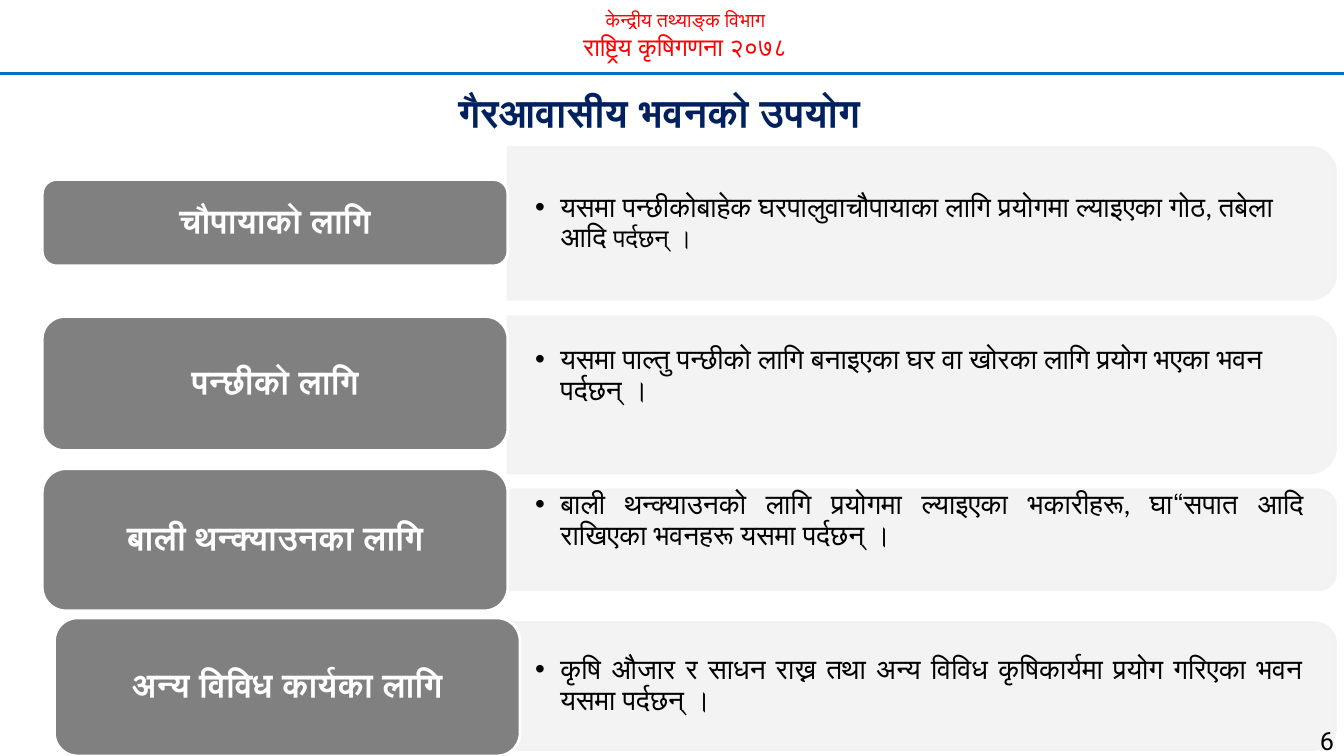
from dataclasses import dataclass

from lxml import etree
from pptx import Presentation
from pptx import util as u
from pptx.dml import color
from pptx.enum import shapes, text
from pptx.oxml import ns


@dataclass(frozen=True)
class Theme:
    red: str = "FF0000"
    blue: str = "0070C0"
    navy: str = "002060"
    black: str = "000000"
    white: str = "FFFFFF"
    pale: str = "F2F2F2"
    grey: str = "808080"
    font: str = "Calibri"
    alt: str = "Arial"
    digit: str = "Roboto"
    small: float = 14
    mid: float = 18
    body: float = 20
    label: float = 24
    title: float = 28


@dataclass(frozen=True)
class Run:
    words: str
    size: float
    ink: str
    font: str = "Calibri"
    bold: bool = False


@dataclass(frozen=True)
class Box:
    left: float
    top: float
    width: float
    height: float

    def points(self) -> tuple:
        return tuple(u.Pt(n) for n in (self.left, self.top, self.width, self.height))


@dataclass(frozen=True)
class Row:
    label: str
    tag: Box
    middle: float
    height: float
    runs: tuple
    align: int
    lift: float = 0


T = Theme()
LEFT, CENTER, RIGHT, FULL = (
    text.PP_ALIGN.LEFT, text.PP_ALIGN.CENTER, text.PP_ALIGN.RIGHT, text.PP_ALIGN.JUSTIFY)
EDGE, SPAN = 362.9, 591.1
TAG_LEFT, TAG_WIDTH = 30.2, 332.6


def rgb(code: str) -> color.RGBColor:
    return color.RGBColor.from_string(code)


def add_runs(para, runs: tuple, align: int, pitch: float = 1) -> None:
    para.alignment = align
    para.line_spacing = pitch
    for item in runs:
        run = para.add_run()
        run.text = item.words
        run.font.size = u.Pt(item.size)
        run.font.name = item.font
        run.font.bold = item.bold
        run.font.color.rgb = rgb(item.ink)


def add_text(slide, box: Box, lines: list, align: int, pitch: float = 1):
    frame = slide.shapes.add_textbox(*box.points()).text_frame
    frame.word_wrap = True
    for i, runs in enumerate(lines):
        para = frame.add_paragraph() if i else frame.paragraphs[0]
        add_runs(para, runs, align, pitch)
    return frame


def add_form(slide, kind: int, box: Box, fill: str, line: str):
    form = slide.shapes.add_shape(kind, *box.points())
    form.shadow.inherit = False
    form.fill.solid()
    form.fill.fore_color.rgb = rgb(fill)
    form.line.color.rgb = rgb(line)
    form.line.width = u.Pt(2)
    return form


def add_panel(slide, row: Row) -> None:
    box = Box(EDGE + (SPAN - row.height) / 2, row.middle - SPAN / 2, row.height, SPAN)
    form = add_form(slide, shapes.MSO_SHAPE.ROUND_2_SAME_RECTANGLE, box, T.pale, T.pale)
    form.rotation = 90
    for tint in form.element.spPr.iter(ns.qn("a:srgbClr")):
        etree.SubElement(tint, ns.qn("a:alpha"), val="90000")


def add_point(slide, row: Row) -> None:
    high = row.height * 0.9
    box = Box(EDGE, row.middle - high / 2, SPAN - row.height * 0.05, high)
    frame = add_text(slide, box, [()], row.align)
    frame.vertical_anchor = text.MSO_ANCHOR.MIDDLE
    frame.margin_left = frame.margin_right = u.Pt(19.4)
    frame.margin_top = u.Pt(0)
    frame.margin_bottom = u.Pt(row.lift)
    para = frame.paragraphs[0]
    para.level = 1
    props = para._p.get_or_add_pPr()
    props.set("marL", str(u.Pt(18)))
    props.set("indent", str(-u.Pt(18)))
    etree.SubElement(props, ns.qn("a:buFont"), typeface=T.alt)
    etree.SubElement(props, ns.qn("a:buChar"), char="•")
    add_runs(para, row.runs, row.align, 0.9)


def add_tag(slide, row: Row) -> None:
    form = add_form(slide, shapes.MSO_SHAPE.ROUNDED_RECTANGLE, row.tag, T.grey, T.white)
    frame = form.text_frame
    frame.word_wrap = True
    frame.vertical_anchor = text.MSO_ANCHOR.MIDDLE
    add_runs(frame.paragraphs[0], (Run(row.label, T.label, T.white, bold=True),), CENTER, 0.9)


def add_rule(slide, high: float) -> None:
    rule = slide.shapes.add_connector(
        shapes.MSO_CONNECTOR.STRAIGHT, u.Pt(0), u.Pt(high), u.Pt(960), u.Pt(high))
    rule.line.color.rgb = rgb(T.blue)
    rule.line.width = u.Pt(1.5)
    etree.SubElement(rule.element.spPr, ns.qn("a:effectLst"))


ROWS = [
    Row("चौपायाको लागि", Box(TAG_LEFT, 128.2, TAG_WIDTH, 61.7), 159.5, 108.6,
        (Run("यसमा पन्छीकोबाहेक घरपालुवाचौपायाका लागि प्रयोगमा ल्याइएका गोठ, तबेला आदि ",
             T.body, T.black),
         Run("पर्दछन् ।", T.mid, T.black)), LEFT),
    Row("पन्छीको लागि", Box(TAG_LEFT, 226.1, TAG_WIDTH, 95.8), 282, 111.6,
        (Run("यसमा पाल्तु पन्छीको लागि बनाइएका घर वा खोरका लागि प्रयोग भएका भवन पर्दछन् ।",
             T.body, T.black, T.alt),), LEFT, 27),
    Row("बाली थन्क्याउनका लागि", Box(TAG_LEFT, 334.8, TAG_WIDTH, 101.5), 385.6, 71.3,
        (Run("बाली थन्क्याउनको लागि प्रयोगमा ल्याइएका भकारीहरू, घा“सपात आदि "
             "राखिएका भवनहरू यसमा पर्दछन् ।", T.body, T.black),), FULL, 27),
    Row("अन्य विविध कार्यका लागि", Box(38.9, 441.4, TAG_WIDTH, 98.6), 490, 90.7,
        (Run("कृषि औजार र साधन राख्न तथा अन्य विविध कृषिकार्यमा प्रयोग गरिएका भवन "
             "यसमा पर्दछन् ।", T.body, T.black, T.alt),), FULL),
]


def main() -> None:
    deck = Presentation()
    deck.slide_width, deck.slide_height = u.Pt(960), u.Pt(540)
    slide = deck.slides.add_slide(deck.slide_layouts[6])
    add_text(slide, Box(90, 2.2, 799.2, 46),
             [(Run("केन्द्रीय तथ्याङ्क विभाग", T.small, T.red),),
              (Run("राष्ट्रिय कृषिगणना २०७८", T.mid, T.red),)], CENTER)
    add_rule(slide, 52.5)
    for row in ROWS:
        add_panel(slide, row)
        add_point(slide, row)
        add_tag(slide, row)
    add_text(slide, Box(885.6, 504, 74.4, 30.2),
             [(Run("6", T.mid, T.black, T.digit),)], RIGHT, 1.5)
    add_text(slide, Box(0, 59.8, 941.8, 41),
             [(Run("गैरआवासीय भवनको उपयोग", T.title, T.navy, bold=True),)], CENTER)
    deck.save("out.pptx")


if __name__ == "__main__":
    main()
